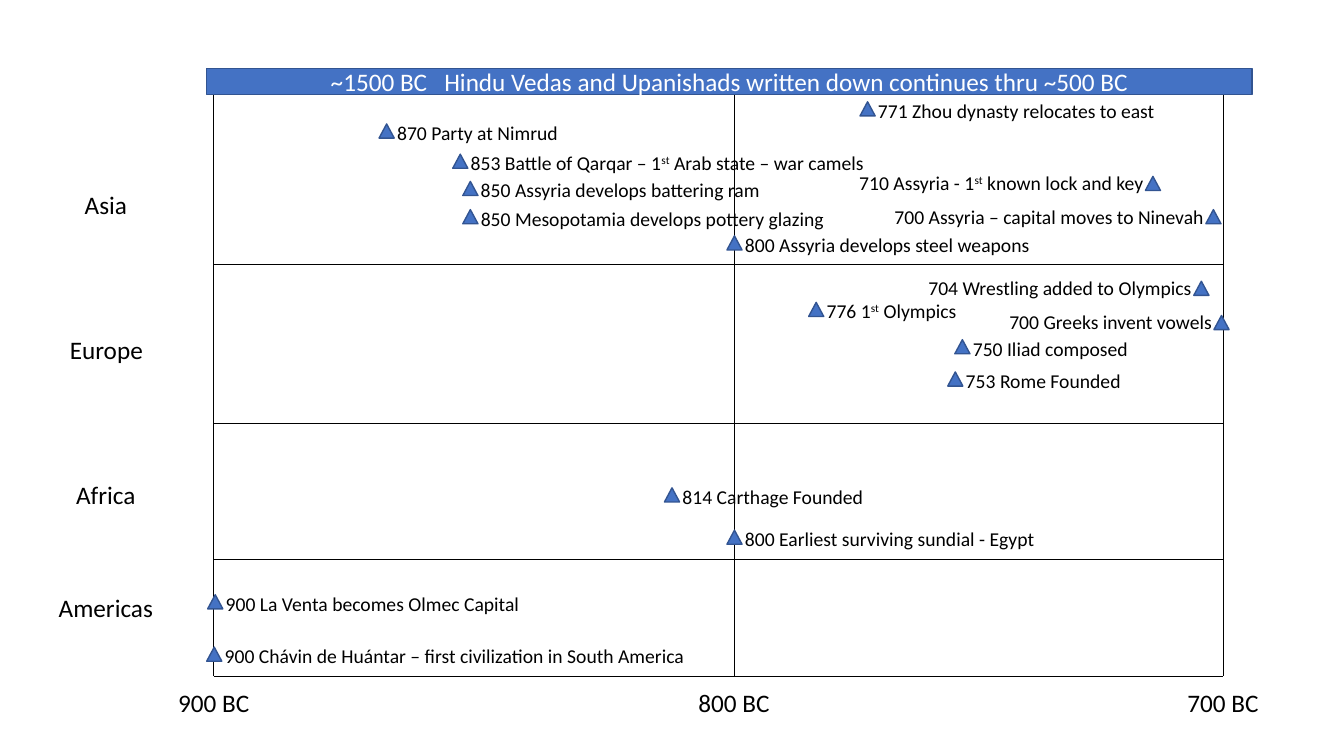
from dataclasses import dataclass

from lxml import etree
from pptx import Presentation
from pptx.dml.color import RGBColor
from pptx.enum.shapes import MSO_CONNECTOR, MSO_SHAPE
from pptx.enum.text import MSO_ANCHOR, MSO_AUTO_SIZE, PP_ALIGN
from pptx.oxml.ns import qn
from pptx.util import Pt

STRAIGHT = MSO_CONNECTOR.STRAIGHT
RECTANGLE = MSO_SHAPE.RECTANGLE
TRIANGLE = MSO_SHAPE.ISOSCELES_TRIANGLE
MIDDLE = MSO_ANCHOR.MIDDLE
GROW = MSO_AUTO_SIZE.SHAPE_TO_FIT_TEXT
LEFT, CENTER, RIGHT = PP_ALIGN.LEFT, PP_ALIGN.CENTER, PP_ALIGN.RIGHT

EMU_PER_PX = 9144  # 100 px to the inch
PAGE_SIZE = (1333, 750)


@dataclass(frozen=True)
class Theme:
    font: str = "Calibri"
    ink: RGBColor = RGBColor(0x00, 0x00, 0x00)
    paper: RGBColor = RGBColor(0xFF, 0xFF, 0xFF)
    accent: RGBColor = RGBColor(0x44, 0x72, 0xC4)
    accent_edge: RGBColor = RGBColor(0x32, 0x54, 0x91)
    label_size: int = 18
    event_size: int = 14
    rule_width: float = 0.5
    edge_width: float = 1


def px(length):
    return length * EMU_PER_PX


class Timeline:
    def __init__(self, page, theme):
        self.page = page
        self.theme = theme

    def rule(self, x1, y1, x2, y2):
        line = self.page.shapes.add_connector(STRAIGHT, px(x1), px(y1), px(x2), px(y2))
        line.line.color.rgb = self.theme.ink
        line.line.width = Pt(self.theme.rule_width)
        etree.SubElement(line._element.spPr, qn("a:effectLst"))

    def shape(self, kind, left, top, width, height):
        shape = self.page.shapes.add_shape(kind, px(left), px(top), px(width), px(height))
        shape.shadow.inherit = False
        shape.fill.solid()
        shape.fill.fore_color.rgb = self.theme.accent
        shape.line.color.rgb = self.theme.accent_edge
        shape.line.width = Pt(self.theme.edge_width)
        return shape

    def span(self, para, text, size, color, **properties):
        """Add a run; properties are extra run attributes such as baseline or spc."""
        span = para.add_run()
        span.text = text
        span.font.name = self.theme.font
        span.font.size = Pt(size)
        span.font.color.rgb = color
        for name, value in properties.items():
            span._r.get_or_add_rPr().set(name, str(value))

    def text(self, left, top, width, height, text, size, align):
        """Place a one-line text; parts between ^ marks are superscript."""
        box = self.page.shapes.add_textbox(px(left), px(top), px(width), px(height))
        frame = box.text_frame
        frame.word_wrap = False
        frame.auto_size = GROW
        para = frame.paragraphs[0]
        para.alignment = align
        for index, part in enumerate(text.split("^")):
            raised = {"baseline": 30000} if index % 2 else {}
            self.span(para, part, size, self.theme.ink, **raised)

    def label(self, center, top, width, text):
        self.text(center - width // 2, top, width, 40, text, self.theme.label_size, CENTER)

    def event(self, x, y, width, text, before=False):
        """Draw a marker with its text after it, or before it."""
        self.shape(TRIANGLE, x, y, 15, 14)
        left, top, align = (x + 8 - width, y - 10, RIGHT) if before else (x + 8, y - 8, LEFT)
        self.text(left, top, width, 34, text, self.theme.event_size, align)

    def banner(self, left, top, width, height, date, text):
        bar = self.shape(RECTANGLE, left, top, width, height)
        bar.text_frame.vertical_anchor = MIDDLE
        para = bar.text_frame.paragraphs[0]
        para.alignment = CENTER
        size, color = self.theme.label_size, self.theme.paper
        self.span(para, date, size, color)
        self.span(para, " ", size, color, spc=810)
        self.span(para, text, size, color)


GRID_TOP, GRID_BOTTOM = 81, 671
CENTURIES = [(212, "900 BC"), (728, "800 BC"), (1213, "700 BC")]
ROW_LINES = [262, 420, 555, GRID_BOTTOM]
REGIONS = [
    (183, 62, "Asia"),
    (327, 93, "Europe"),
    (471, 80, "Africa"),
    (583, 114, "Americas"),
]
EVENTS_TEXT_AFTER = [
    (853, 101, 297, "771 Zhou dynasty relocates to east"),
    (376, 123, 181, "870 Party at Nimrud"),
    (449, 153, 421, "853 Battle of Qarqar – 1^st^ Arab state – war camels"),
    (459, 180, 300, "850 Assyria develops battering ram"),
    (459, 208, 365, "850 Mesopotamia develops pottery glazing"),
    (721, 234, 305, "800 Assyria develops steel weapons"),
    (802, 300, 151, "776 1^st^ Olympics"),
    (947, 337, 175, "750 Iliad composed"),
    (940, 369, 175, "753 Rome Founded"),
    (659, 484, 201, "814 Carthage Founded"),
    (721, 526, 311, "800 Earliest surviving sundial - Egypt"),
    (206, 590, 314, "900 La Venta becomes Olmec Capital"),
    (205, 642, 476, "900 Chávin de Huántar – first civilization in South America"),
]
EVENTS_TEXT_BEFORE = [
    (1136, 175, 305, "710 Assyria - 1^st^ known lock and key"),
    (1196, 208, 330, "700 Assyria – capital moves to Ninevah"),
    (1184, 279, 284, "704 Wrestling added to Olympics"),
    (1204, 313, 224, "700 Greeks invent vowels"),
]


def main():
    deck = Presentation()
    deck.slide_width, deck.slide_height = map(px, PAGE_SIZE)
    timeline = Timeline(deck.slides.add_slide(deck.slide_layouts[6]), Theme())

    for x, century in CENTURIES:
        timeline.rule(x, GRID_TOP, x, GRID_BOTTOM)
        timeline.label(x, 677, 92, century)
    for y in ROW_LINES:
        timeline.rule(CENTURIES[0][0], y, CENTURIES[-1][0], y)
    for top, width, region in REGIONS:
        timeline.label(105, top, width, region)

    timeline.banner(205, 68, 1037, 26, "~1500 BC",
                    "Hindu Vedas and Upanishads written down continues thru ~500 BC")
    for event in EVENTS_TEXT_AFTER:
        timeline.event(*event)
    for event in EVENTS_TEXT_BEFORE:
        timeline.event(*event, before=True)

    deck.save("out.pptx")


if __name__ == "__main__":
    main()
